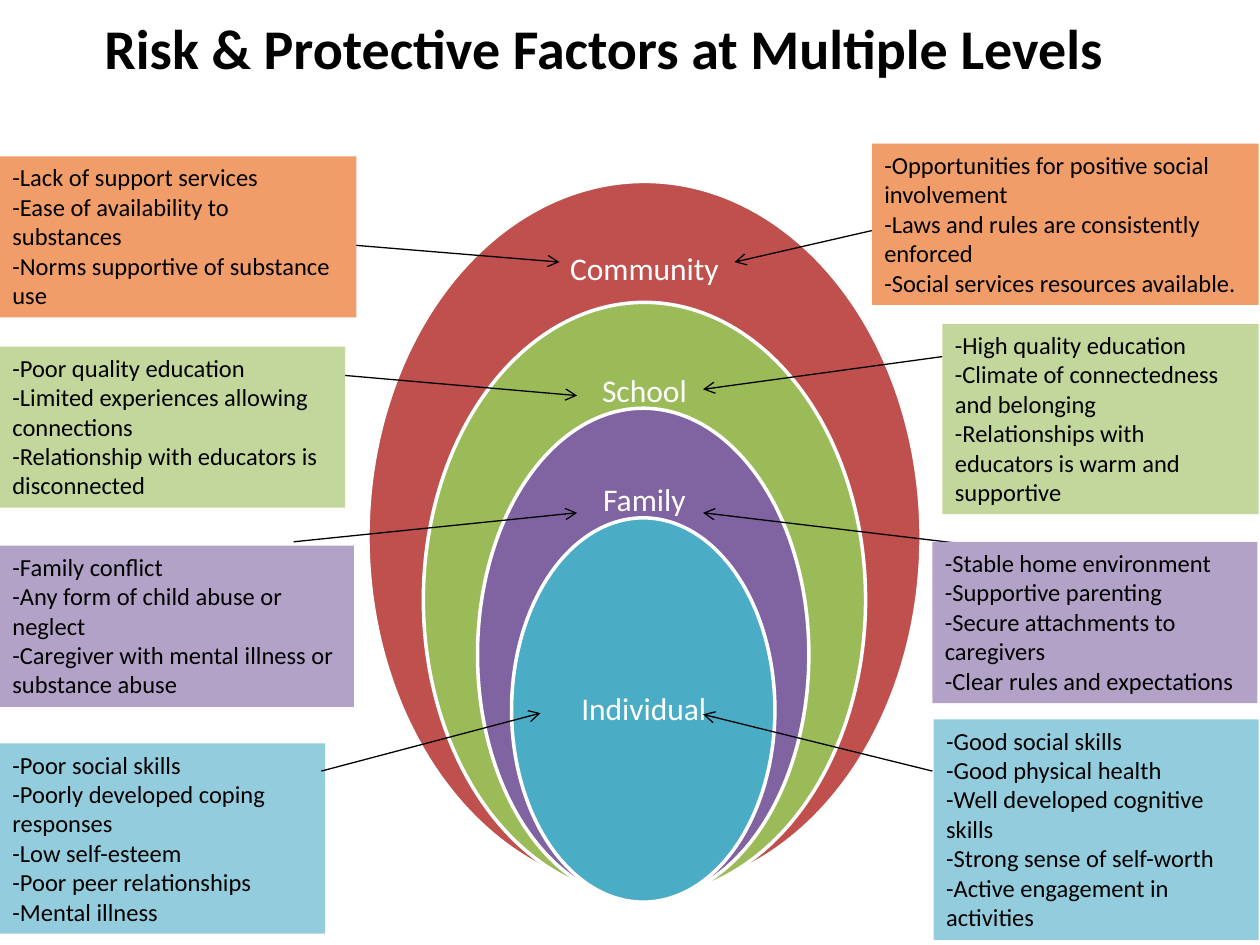
from dataclasses import dataclass

from lxml import etree
from pptx import Presentation
from pptx import util as u
from pptx.dml.color import RGBColor
from pptx.enum import shapes, text
from pptx.oxml.ns import qn

BLACK = RGBColor(0x00, 0x00, 0x00)
WHITE = RGBColor(0xFF, 0xFF, 0xFF)
RED = RGBColor(0xC0, 0x50, 0x4D)
GREEN = RGBColor(0x9B, 0xBB, 0x59)
PURPLE = RGBColor(0x80, 0x64, 0xA2)
TEAL = RGBColor(0x4B, 0xAC, 0xC6)
ORANGE = RGBColor(0xF1, 0x9D, 0x69)
LIGHT_GREEN = RGBColor(0xC3, 0xD6, 0x9B)
LIGHT_PURPLE = RGBColor(0xB3, 0xA2, 0xC7)
LIGHT_TEAL = RGBColor(0x93, 0xCD, 0xDD)


def inches(*lengths):
    return [u.Inches(length) for length in lengths]


@dataclass
class Side:
    """Factors on one side of a level: box position, lines and arrow ends."""
    box: tuple
    factors: list
    start: tuple
    end: tuple


@dataclass
class Level:
    name: str
    color: RGBColor
    box_color: RGBColor
    ellipse: tuple
    label: tuple
    risk: Side
    protective: Side

    @property
    def sides(self):
        return self.risk, self.protective


class SlideBuilder:
    font_name = "Calibri"
    title_size = u.Pt(32)
    label_size = u.Pt(18)
    factor_size = u.Pt(14)

    def __init__(self, slide):
        self.slide = slide

    def style(self, paragraph, size, color, bold=False):
        font = paragraph.font
        font.name, font.size, font.bold = self.font_name, size, bold
        font.color.rgb = color

    def title(self, wording, box):
        shape = self.slide.shapes.title
        shape.left, shape.top, shape.width, shape.height = inches(*box)
        frame = shape.text_frame
        frame.text = wording
        frame.vertical_anchor = text.MSO_ANCHOR.MIDDLE
        paragraph = frame.paragraphs[0]
        paragraph.alignment = text.PP_ALIGN.CENTER
        self.style(paragraph, self.title_size, BLACK, bold=True)

    def ellipse(self, box, color):
        shape = self.slide.shapes.add_shape(shapes.MSO_SHAPE.OVAL, *inches(*box))
        shape.shadow.inherit = False
        shape.fill.solid()
        shape.fill.fore_color.rgb = color
        shape.line.color.rgb = WHITE
        shape.line.width = u.Pt(2)

    def label(self, wording, box):
        frame = self.slide.shapes.add_textbox(*inches(*box)).text_frame
        frame.word_wrap = True
        frame.vertical_anchor = text.MSO_ANCHOR.MIDDLE
        frame.margin_left = frame.margin_right = 0
        frame.margin_top = frame.margin_bottom = 0
        frame.text = wording
        paragraph = frame.paragraphs[0]
        paragraph.alignment = text.PP_ALIGN.CENTER
        paragraph.line_spacing = 0.9
        self.style(paragraph, self.label_size, WHITE)

    def factor_box(self, side, color):
        shape = self.slide.shapes.add_textbox(*inches(*side.box))
        shape.fill.solid()
        shape.fill.fore_color.rgb = color
        frame = shape.text_frame
        frame.word_wrap = True
        frame.auto_size = text.MSO_AUTO_SIZE.SHAPE_TO_FIT_TEXT
        frame.text = "\n".join("-" + factor for factor in side.factors)
        for paragraph in frame.paragraphs:
            self.style(paragraph, self.factor_size, BLACK)

    def arrow(self, start, end):
        connector = self.slide.shapes.add_connector(
            shapes.MSO_CONNECTOR.STRAIGHT, *inches(*start, *end))
        connector.line.color.rgb = BLACK
        connector.line.width = u.Pt(0.75)
        etree.SubElement(connector.line._get_or_add_ln(), qn("a:tailEnd"), type="arrow")
        etree.SubElement(connector._element.spPr, qn("a:effectLst"))


LEVELS = [
    Level("Community", RED, ORANGE, (2.92, 1.44, 4.39, 5.64), (4.5, 1.72, 1.23, 0.85),
          Side((0, 1.24, 2.83, 1.28),
               ["Lack of support services",
                "Ease of availability to substances",
                "Norms supportive of substance use"],
               (2.25, 1.9), (4.44, 2.08)),
          Side((6.92, 1.14, 3.07, 1.28),
               ["Opportunities for positive social involvement",
                "Laws and rules are consistently enforced",
                "Social services resources available."],
               (6.92, 1.83), (5.83, 2.08))),
    Level("School", GREEN, LIGHT_GREEN, (3.36, 2.4, 3.51, 4.72), (4.5, 2.69, 1.23, 0.85),
          Side((0, 2.75, 2.74, 1.28),
               ["Poor quality education",
                "Limited experiences allowing connections",
                "Relationship with educators is disconnected"],
               (2.74, 2.98), (4.58, 3.14)),
          Side((7.48, 2.57, 2.51, 1.51),
               ["High quality education",
                "Climate of connectedness and belonging",
                "Relationships with educators is warm and supportive"],
               (7.48, 2.83), (5.58, 3.09))),
    Level("Family", PURPLE, LIGHT_PURPLE, (3.79, 3.24, 2.63, 3.91), (4.5, 3.54, 1.23, 0.88),
          Side((0, 4.33, 2.81, 1.28),
               ["Family conflict",
                "Any form of child abuse or neglect",
                "Caregiver with mental illness or substance abuse"],
               (2.33, 4.3), (4.58, 4.07)),
          Side((7.4, 4.3, 2.58, 1.28),
               ["Stable home environment",
                "Supportive parenting",
                "Secure attachments to caregivers",
                "Clear rules and expectations"],
               (7.67, 4.32), (5.58, 4.07))),
    Level("Individual", TEAL, LIGHT_TEAL, (4.06, 4.11, 2.09, 3.05), (4.37, 4.88, 1.48, 1.52),
          Side((0, 5.9, 2.58, 1.51),
               ["Poor social skills",
                "Poorly developed coping responses",
                "Low self-esteem",
                "Poor peer relationships",
                "Mental illness"],
               (2.55, 6.12), (4.29, 5.66)),
          Side((7.41, 5.71, 2.58, 1.75),
               ["Good social skills",
                "Good physical health",
                "Well developed cognitive skills",
                "Strong sense of self-worth",
                "Active engagement in activities"],
               (7.4, 6.12), (5.58, 5.67))),
]


def main():
    presentation = Presentation()
    presentation.slide_width, presentation.slide_height = inches(10, 7.5)
    title_only = presentation.slide_layouts[5]
    builder = SlideBuilder(presentation.slides.add_slide(title_only))

    builder.title("Risk & Protective Factors at Multiple Levels", (0.53, -0.09, 8.53, 0.93))
    for level in LEVELS:
        builder.ellipse(level.ellipse, level.color)
        builder.label(level.name, level.label)

    # Arrows lie over the individual boxes and under all the others.
    *outer_levels, individual = LEVELS
    for side in individual.sides:
        builder.factor_box(side, individual.box_color)
    for level in LEVELS:
        for side in level.sides:
            builder.arrow(side.start, side.end)
    for level in outer_levels:
        for side in level.sides:
            builder.factor_box(side, level.box_color)

    presentation.save("out.pptx")


if __name__ == "__main__":
    main()
